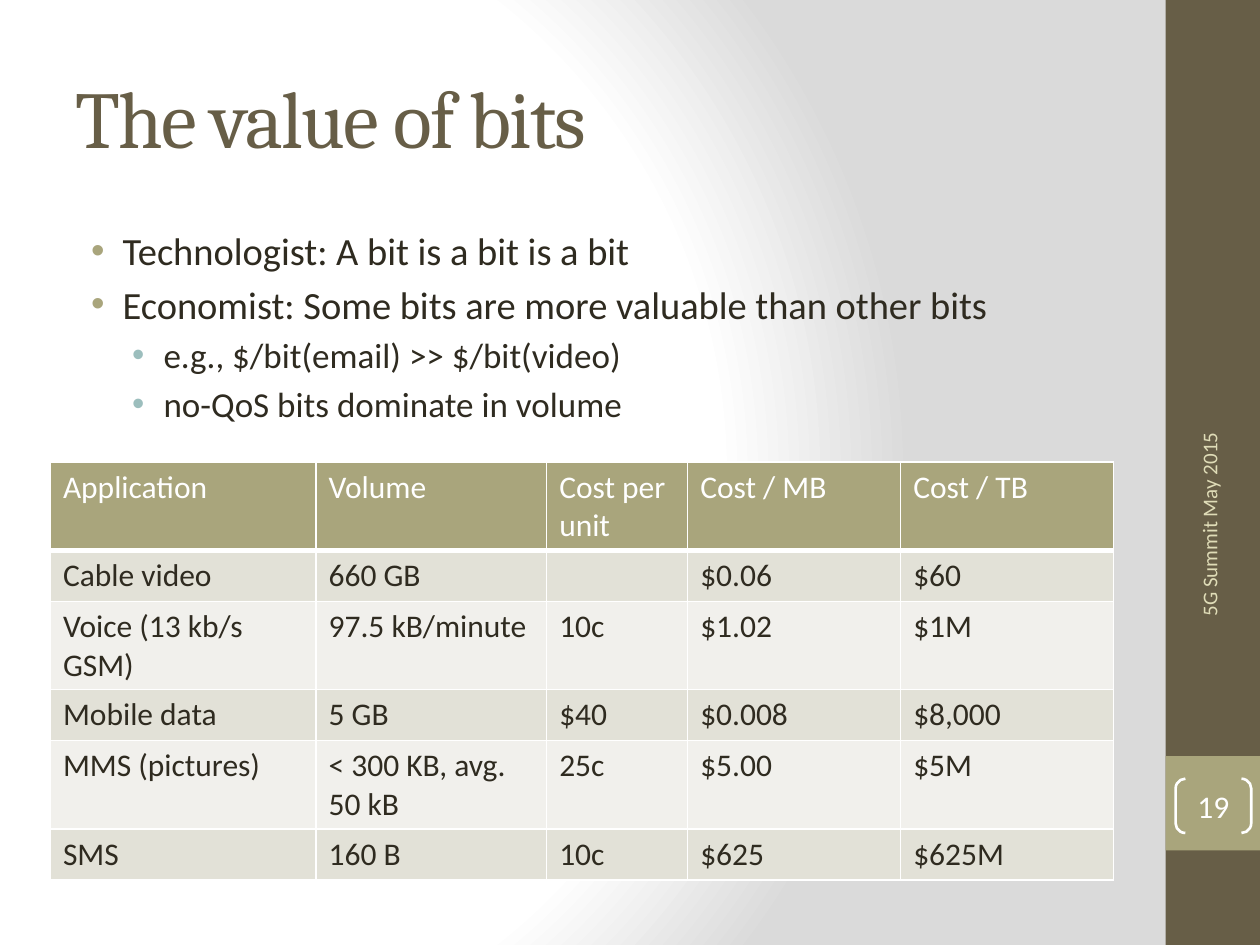
from dataclasses import dataclass

from lxml import etree
from pptx import Presentation
from pptx.dml.color import RGBColor
from pptx.enum.shapes import MSO_SHAPE
from pptx.enum.text import MSO_ANCHOR, PP_ALIGN
from pptx.oxml import parse_xml
from pptx.oxml.ns import qn
from pptx.util import Pt

RECTANGLE, BRACKETS = MSO_SHAPE.RECTANGLE, MSO_SHAPE.DOUBLE_BRACKET
TOP, MIDDLE = MSO_ANCHOR.TOP, MSO_ANCHOR.MIDDLE
LEFT, CENTER, RIGHT = PP_ALIGN.LEFT, PP_ALIGN.CENTER, PP_ALIGN.RIGHT
DRAWING_NS = "http://schemas.openxmlformats.org/drawingml/2006/main"


@dataclass(frozen=True)
class Theme:
    heading_font: str = "Cambria"
    body_font: str = "Calibri"
    title_size: float = 46
    point_size: float = 22
    subpoint_size: float = 20
    table_size: float = 18
    footer_size: float = 12
    white: str = "FFFFFF"
    shade: str = "DADADA"
    brown: str = "675E47"
    olive: str = "A9A57C"
    teal: str = "9CBEBD"
    ink: str = "2F2B20"
    cream: str = "DFDCB7"
    bands: tuple = ("E2E1D7", "F1F0EC")


THEME = Theme()

POINTS = [
    (0, "Technologist: A bit is a bit is a bit"),
    (0, "Economist: Some bits are more valuable than other bits"),
    (1, "e.g., $/bit(email) >> $/bit(video)"),
    (1, "no-QoS bits dominate in volume"),
]
# size, bullet colour and left indent of each outline level
LEVELS = [(THEME.point_size, THEME.olive, 27), (THEME.subpoint_size, THEME.teal, 50.4)]
HANGING = 18

COSTS = [
    ("Application", "Volume", "Cost per unit", "Cost / MB", "Cost / TB"),
    ("Cable video", "660 GB", "", "$0.06", "$60"),
    ("Voice (13 kb/s GSM)", "97.5 kB/minute", "10c", "$1.02", "$1M"),
    ("Mobile data", "5 GB", "$40", "$0.008", "$8,000"),
    ("MMS (pictures)", "< 300 KB, avg. 50 kB", "25c", "$5.00", "$5M"),
    ("SMS", "160 B", "10c", "$625", "$625M"),
]
COLUMN_WIDTHS = (151.8, 131.8, 80.6, 121.7, 121.7)
ROW_HEIGHT = 29.2


def rgb(value):
    return RGBColor.from_string(value)


def box(left, top, width, height):
    return Pt(left), Pt(top), Pt(width), Pt(height)


def write(paragraph, text, *, size, color, font=THEME.body_font, align=LEFT, spacing=None):
    """Put formatted text in a paragraph; spacing is the tracking in points."""
    paragraph.alignment = align
    run = paragraph.add_run()
    run.text = text
    run.font.size = Pt(size)
    run.font.name = font
    run.font.color.rgb = rgb(color)
    if spacing is not None:
        run.font._element.set("spc", str(round(spacing * 100)))


def paint_background(slide):
    """Radial gradient centred towards the left edge."""
    slide.background.fill.gradient()
    gradient = slide.element.find(".//" + qn("a:gradFill"))
    stops = "".join(
        f'<a:gs pos="{percent * 1000}"><a:srgbClr val="{color}"/></a:gs>'
        for percent, color in ((0, THEME.white), (75, THEME.white), (100, THEME.shade))
    )
    gradient.getparent().replace(gradient, parse_xml(
        f'<a:gradFill xmlns:a="{DRAWING_NS}" rotWithShape="1"><a:gsLst>{stops}</a:gsLst>'
        '<a:path path="circle"><a:fillToRect l="20000" t="50000" r="100000" b="50000"/>'
        '</a:path></a:gradFill>'
    ))


def add_panel(slide, area, color):
    panel = slide.shapes.add_shape(RECTANGLE, *box(*area))
    panel.shadow.inherit = False
    panel.fill.solid()
    panel.fill.fore_color.rgb = rgb(color)
    panel.line.fill.background()


def add_text(slide, area, anchor=MIDDLE, rotation=0):
    """Add a wrapping text box and return its text frame."""
    holder = slide.shapes.add_textbox(*box(*area))
    holder.rotation = rotation
    frame = holder.text_frame
    frame.word_wrap = True
    frame.vertical_anchor = anchor
    return frame


def set_bullet(paragraph, color, indent):
    properties = paragraph._p.get_or_add_pPr()
    properties.set("marL", str(Pt(indent)))
    properties.set("indent", str(-Pt(HANGING)))
    bullet_color = etree.SubElement(properties, qn("a:buClr"))
    etree.SubElement(bullet_color, qn("a:srgbClr"), val=color)
    etree.SubElement(properties, qn("a:buFont"), typeface="Arial")
    etree.SubElement(properties, qn("a:buChar"), char="•")


def add_points(slide):
    frame = add_text(slide, (36, 126, 648, 176.4), anchor=TOP)
    for index, (level, text) in enumerate(POINTS):
        size, bullet_color, indent = LEVELS[level]
        paragraph = frame.add_paragraph() if index else frame.paragraphs[0]
        paragraph.level = level
        paragraph.space_before = Pt(size * 0.2)
        set_bullet(paragraph, bullet_color, indent)
        write(paragraph, text, size=size, color=THEME.ink)


def add_page_number(slide, number):
    badge = slide.shapes.add_shape(BRACKETS, *box(671.8, 445, 43.2, 31))
    badge.shadow.inherit = False
    badge.adjustments[0] = 0.18
    badge.fill.background()
    badge.line.color.rgb = rgb(THEME.white)
    badge.line.width = Pt(1.5)
    frame = badge.text_frame
    frame.margin_left = frame.margin_right = frame.margin_top = frame.margin_bottom = 0
    frame.vertical_anchor = MIDDLE
    write(frame.paragraphs[0], number, size=THEME.table_size, color=THEME.white, align=CENTER)


def set_borders(cell, top=1, bottom=1):
    properties = cell._tc.get_or_add_tcPr()
    widths = {"a:lnL": 1, "a:lnR": 1, "a:lnT": top, "a:lnB": bottom}
    for position, (side, width) in enumerate(widths.items()):
        line = etree.Element(qn(side), w=str(Pt(width)))
        fill = etree.SubElement(line, qn("a:solidFill"))
        etree.SubElement(fill, qn("a:srgbClr"), val=THEME.white)
        properties.insert(position, line)


def add_cost_table(slide):
    holder = slide.shapes.add_table(
        len(COSTS), len(COLUMN_WIDTHS), *box(28.8, 264, sum(COLUMN_WIDTHS), 239))
    table = holder.table
    for column, width in zip(table.columns, COLUMN_WIDTHS):
        column.width = Pt(width)
    for row_index, entries in enumerate(COSTS):
        header = row_index == 0
        table.rows[row_index].height = Pt(ROW_HEIGHT)
        for column_index, text in enumerate(entries):
            cell = table.cell(row_index, column_index)
            cell.fill.solid()
            cell.fill.fore_color.rgb = rgb(
                THEME.olive if header else THEME.bands[(row_index - 1) % 2])
            set_borders(cell, top=3 if row_index == 1 else 1, bottom=3 if header else 1)
            write(cell.text_frame.paragraphs[0], text, size=THEME.table_size,
                  color=THEME.white if header else THEME.ink)
    holder.height = Pt(239)


def main():
    deck = Presentation()
    deck.slide_width, deck.slide_height = Pt(720), Pt(540)
    slide = deck.slides.add_slide(deck.slide_layouts[6])
    paint_background(slide)
    add_panel(slide, (666, 0, 54, 540), THEME.brown)
    add_panel(slide, (666, 432, 54, 54), THEME.olive)
    title = add_text(slide, (36, 21.6, 600, 90))
    write(title.paragraphs[0], "The value of bits", size=THEME.title_size,
          color=THEME.brown, font=THEME.heading_font, spacing=-1)
    add_points(slide)
    add_page_number(slide, "19")
    add_cost_table(slide)
    footer = add_text(slide, (597.6, 319, 186.5, 28.8), rotation=270)
    write(footer.paragraphs[0], "5G Summit May 2015", size=THEME.footer_size,
          color=THEME.cream, align=RIGHT)
    deck.save("out.pptx")


if __name__ == "__main__":
    main()
